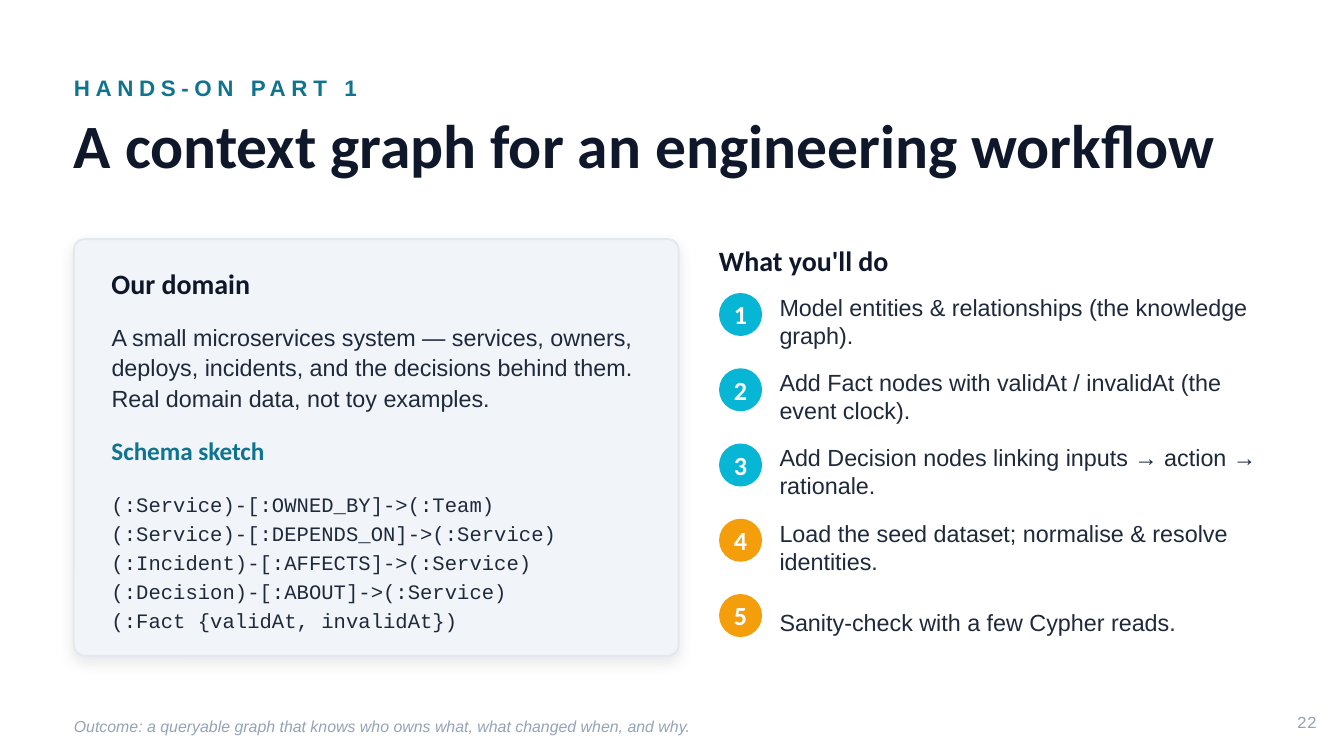
import pptx
import pptx.dml.color
import pptx.enum.shapes
import pptx.enum.text
import pptx.oxml
import pptx.oxml.ns
import pptx.util
from dataclasses import dataclass
from typing import Any

ALIGN = pptx.enum.text.PP_ALIGN
ANCHOR = pptx.enum.text.MSO_ANCHOR
SHAPE = pptx.enum.shapes.MSO_SHAPE

INK, TEXT, TEAL, GREY = "0F172A", "1E293B", "0E7490", "94A3B8"
CYAN, AMBER, WHITE = "06B6D4", "F59E0B", "FFFFFF"
COLS, ROWS = 100, 56.25
LEFT, INNER, RIGHT = 5.5, 8.3, 53.5
WIDE = COLS - 2 * LEFT


@dataclass
class Box:
    col: float
    row: float
    wide: float
    high: float


@dataclass
class Style:
    name: str
    size: float
    hue: str
    bold: bool = False
    italic: bool = False
    track: int = 0
    lead: float = 1.0
    align: Any = ALIGN.LEFT


@dataclass
class Label:
    box: Box
    text: str
    style: Style


@dataclass
class Step:
    text: str
    hue: str


BODY = Style("Arial", 12.5, TEXT)
HEAD = Style("Calibri", 15, INK, bold=True)
TITLE = Style("Calibri", 33, INK, bold=True, lead=0.98)
BADGE = Style("Calibri", 14, WHITE, bold=True, align=ALIGN.CENTER)

SCHEMA = """(:Service)-[:OWNED_BY]->(:Team)
(:Service)-[:DEPENDS_ON]->(:Service)
(:Incident)-[:AFFECTS]->(:Service)
(:Decision)-[:ABOUT]->(:Service)
(:Fact {validAt, invalidAt})"""

LABELS = [
    Label(Box(LEFT, 5, WIDE, 3), "HANDS-ON PART 1",
          Style("Arial", 12, TEAL, bold=True, track=300)),
    Label(Box(INNER, 19.5, 40, 3.2), "Our domain", HEAD),
    Label(Box(INNER, 23, 39.5, 8.5),
          "A small microservices system — services, owners, deploys, incidents, "
          "and the decisions behind them. Real domain data, not toy examples.",
          Style("Arial", 12.5, TEXT, lead=1.1)),
    Label(Box(INNER, 32, 40, 3), "Schema sketch",
          Style("Calibri", 13.5, TEAL, bold=True)),
    Label(Box(INNER, 35.2, 40, 13), SCHEMA,
          Style("Courier New", 11, TEXT, lead=1.18)),
    Label(Box(RIGHT, 17.8, 40, 3.2), "What you'll do", HEAD),
    Label(Box(LEFT, 52.8, WIDE, 2.5),
          "Outcome: a queryable graph that knows who owns what, "
          "what changed when, and why.",
          Style("Arial", 8.5, GREY, italic=True)),
    Label(Box(92, 52.2, 6, 3), "22",
          Style("Courier New", 9, GREY, align=ALIGN.RIGHT)),
]

STEPS = [
    Step("Model entities & relationships (the knowledge graph).", CYAN),
    Step("Add Fact nodes with validAt / invalidAt (the event clock).", CYAN),
    Step("Add Decision nodes linking inputs → action → rationale.", CYAN),
    Step("Load the seed dataset; normalise & resolve identities.", AMBER),
    Step("Sanity-check with a few Cypher reads.", AMBER),
]

deck = pptx.Presentation()
deck.slide_width = pptx.util.Inches(10)
deck.slide_height = pptx.util.Inches(5.625)
slide = deck.slides.add_slide(deck.slide_layouts[5])


def tint(code: str) -> pptx.dml.color.RGBColor:
    return pptx.dml.color.RGBColor.from_string(code)


def place(box: Box) -> tuple[int, int, int, int]:
    unit_x, unit_y = deck.slide_width / COLS, deck.slide_height / ROWS
    return (round(box.col * unit_x), round(box.row * unit_y),
            round(box.wide * unit_x), round(box.high * unit_y))


def write(shape: Any, text: str, style: Style,
          anchor: Any = ANCHOR.MIDDLE, wrap: bool = True) -> None:
    frame = shape.text_frame
    frame.text = text
    form = {"margin_left": 0, "margin_right": 0, "margin_top": 0,
            "margin_bottom": 0, "word_wrap": wrap, "vertical_anchor": anchor,
            "auto_size": pptx.enum.text.MSO_AUTO_SIZE.NONE}
    for key, value in form.items():
        setattr(frame, key, value)
    face = {"name": style.name, "size": pptx.util.Pt(style.size),
            "bold": style.bold, "italic": style.italic}
    for para in frame.paragraphs:
        para.alignment = style.align
        para.line_spacing = style.lead
        for run in para.runs:
            for key, value in face.items():
                setattr(run.font, key, value)
            run.font.color.rgb = tint(style.hue)
            if style.track:
                run.font._element.set("spc", str(style.track))


def draw_label(label: Label) -> None:
    shape = slide.shapes.add_textbox(*place(label.box))
    write(shape, label.text, label.style)


def draw_shape(kind: Any, box: Box, fill: str) -> Any:
    shape = slide.shapes.add_shape(kind, *place(box))
    shape.shadow.inherit = False
    shape.fill.solid()
    shape.fill.fore_color.rgb = tint(fill)
    shape.line.fill.background()
    return shape


def draw_card(box: Box) -> None:
    card = draw_shape(SHAPE.ROUNDED_RECTANGLE, box, "F1F5F9")
    card.adjustments[0] = 0.026
    card.line.color.rgb = tint("E2E8F0")
    card.line.width = pptx.util.Pt(1)
    blur, drop = pptx.util.Pt(8), pptx.util.Pt(3)
    glow = pptx.oxml.parse_xml(
        f'<a:outerShdw {pptx.oxml.ns.nsdecls("a")} blurRad="{blur}" '
        f'dist="{drop}" dir="5400000" algn="bl" rotWithShape="0">'
        '<a:srgbClr val="0B1221"><a:alpha val="10000"/></a:srgbClr>'
        '</a:outerShdw>')
    card._element.spPr.find(pptx.oxml.ns.qn("a:effectLst")).append(glow)


def draw_step(index: int, step: Step) -> None:
    row = 21.8 + 5.6 * index
    badge = draw_shape(SHAPE.OVAL, Box(RIGHT, row, 3.2, 3.2), step.hue)
    write(badge, str(index + 1), BADGE, wrap=False)
    draw_label(Label(Box(RIGHT + 4.5, row - 0.4, 36.5, 5), step.text, BODY))


def main() -> None:
    title = slide.shapes.title
    title.left, title.top, title.width, title.height = place(
        Box(LEFT, 8.2, WIDE, 8.2))
    write(title, "A context graph for an engineering workflow", TITLE, ANCHOR.TOP)
    draw_card(Box(LEFT, 17.8, 45, 31))
    for label in LABELS:
        draw_label(label)
    for index, step in enumerate(STEPS):
        draw_step(index, step)
    deck.save("out.pptx")


if __name__ == "__main__":
    main()
